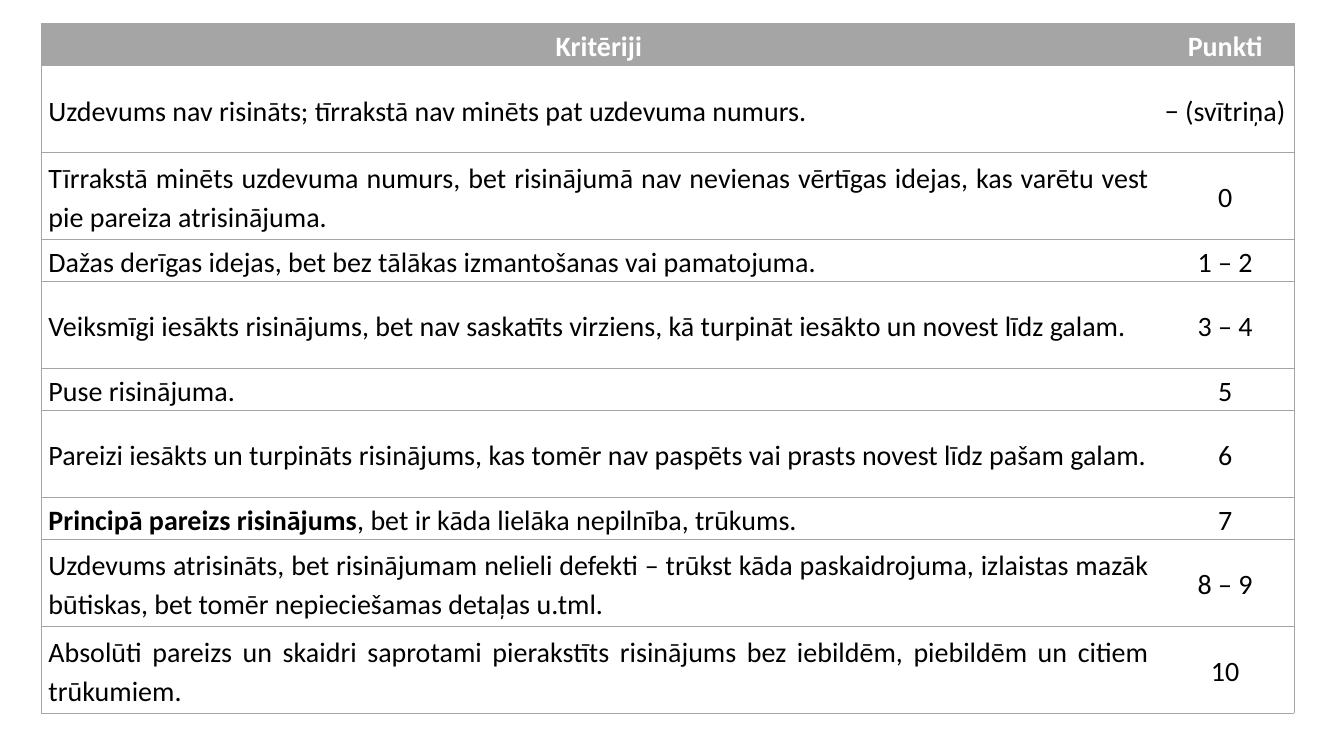
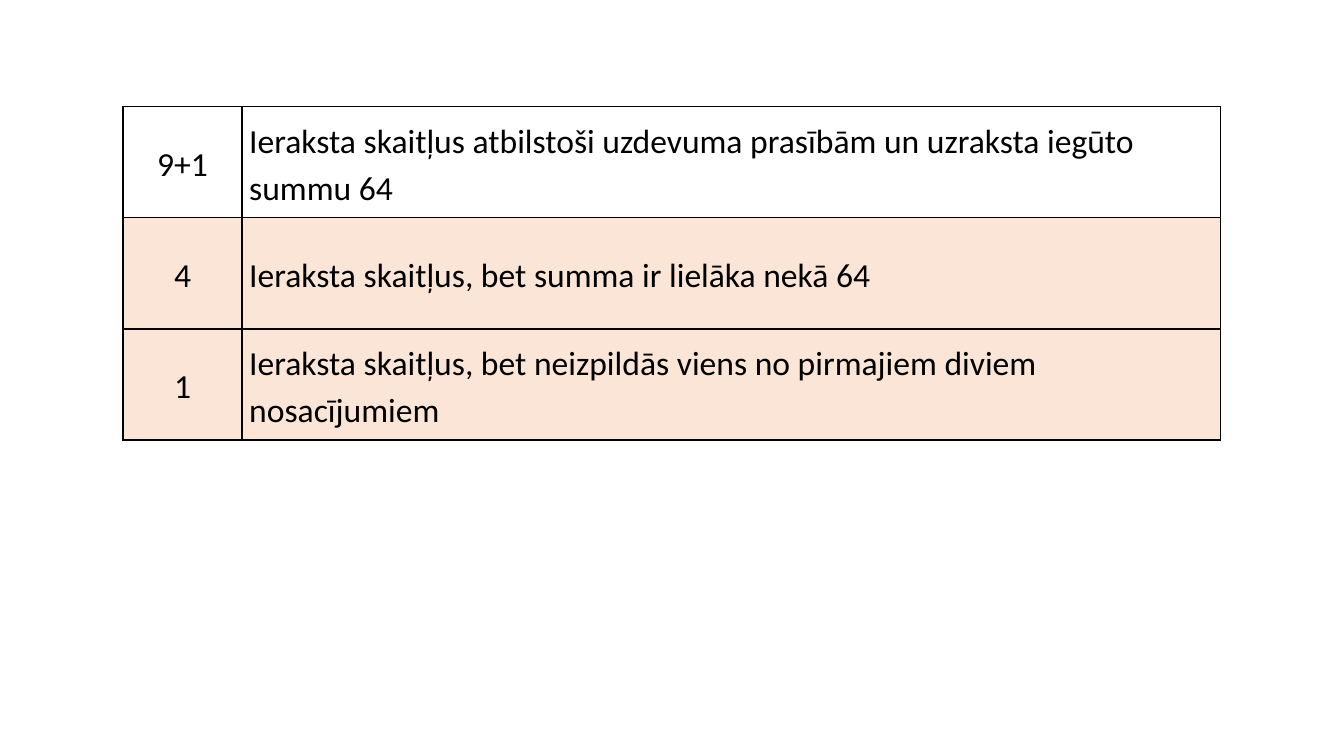
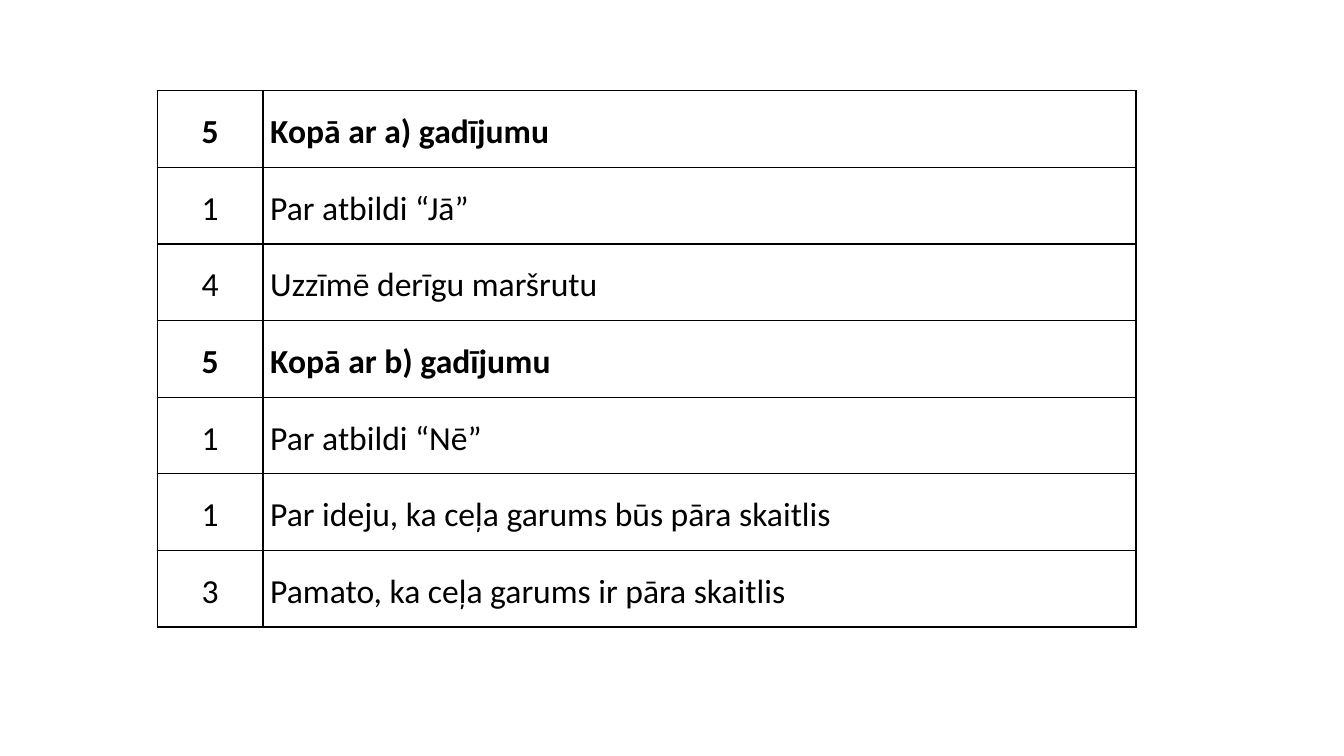
from lxml import etree
from pptx import Presentation
from pptx.dml.color import RGBColor
from pptx.enum import text
from pptx.oxml import ns
from pptx.util import Cm, Pt

BLACK = RGBColor(0x00, 0x00, 0x00)
WHITE = RGBColor(0xFF, 0xFF, 0xFF)
GRAY = RGBColor(0xA5, 0xA5, 0xA5)
PEACH = RGBColor(0xFB, 0xE5, 0xD6)

LEFT, CENTER, JUSTIFY = (text.PP_ALIGN.LEFT, text.PP_ALIGN.CENTER,
                         text.PP_ALIGN.JUSTIFY)


class Deck:
    """Holds the shared table style and the current slide."""

    FONT = "Calibri"
    CELL = {"vertical_anchor": text.MSO_ANCHOR.MIDDLE,
            "margin_left": Cm(0.18), "margin_right": Cm(0.18),
            "margin_top": 0, "margin_bottom": 0}
    PARAGRAPH = {"line_spacing": 1.15, "space_after": Pt(10)}
    FLAGS = {"first_row": False, "horz_banding": False}

    def __init__(self):
        self.prs = Presentation()
        self.prs.slide_width, self.prs.slide_height = Cm(33.87), Cm(19.05)
        self.slide = None

    def new_slide(self):
        self.slide = self.prs.slides.add_slide(self.prs.slide_layouts[6])

    @staticmethod
    def apply(target, values):
        for name, value in values.items():
            setattr(target, name, value)

    def border(self, cell, side, color, width):
        """Draw one cell edge; a color of None hides it."""
        line = etree.SubElement(cell._tc.get_or_add_tcPr(),
                                ns.qn(f"a:ln{side}"), w=str(Pt(width)))
        if color is None:
            etree.SubElement(line, ns.qn("a:noFill"))
        else:
            fill = etree.SubElement(line, ns.qn("a:solidFill"))
            etree.SubElement(fill, ns.qn("a:srgbClr"), val=str(color))

    def cell_text(self, cell, content, align, size, color, bold):
        """Set a string, or a list of (string, bold) pairs."""
        self.apply(cell, self.CELL)
        paragraph = cell.text_frame.paragraphs[0]
        self.apply(paragraph, {**self.PARAGRAPH, "alignment": align})
        runs = [(content, bold)] if isinstance(content, str) else content
        for words, run_bold in runs:
            run = paragraph.add_run()
            run.text = words
            self.apply(run.font, {"name": self.FONT, "size": Pt(size),
                                  "bold": run_bold})
            run.font.color.rgb = color

    def table(self, left, top, widths, heights, rows, aligns, size,
              line, line_width, inner_lines=True, header=None,
              bold_rows=(), fills=None):
        fills = fills or {}
        grid = self.slide.shapes.add_table(
            len(rows), len(widths), Cm(left), Cm(top),
            Cm(sum(widths)), Cm(sum(heights))).table
        self.apply(grid, self.FLAGS)
        for column, width in zip(grid.columns, widths):
            column.width = Cm(width)
        for row, height in zip(grid.rows, heights):
            row.height = Cm(height)

        last = len(widths) - 1
        for r, row in enumerate(rows):
            is_header = r == header
            for c, content in enumerate(row):
                cell = grid.cell(r, c)
                self.cell_text(cell, content,
                               CENTER if is_header else aligns[c], size,
                               WHITE if is_header else BLACK,
                               is_header or r in bold_rows)
                # Edges come before the fill in the cell properties
                shown = {"L": inner_lines or c == 0,
                         "R": inner_lines or c == last, "T": True, "B": True}
                for side, visible in shown.items():
                    self.border(cell, side, line if visible else None,
                                line_width)
                if r in fills:
                    cell.fill.solid()
                    cell.fill.fore_color.rgb = fills[r]
                else:
                    cell.fill.background()


def main():
    deck = Deck()

    # General marking criteria
    criteria = [
        ("Kritēriji", "Punkti"),
        ("Uzdevums nav risināts; tīrrakstā nav minēts pat uzdevuma numurs.",
         "− (svītriņa)"),
        ("Tīrrakstā minēts uzdevuma numurs, bet risinājumā nav nevienas "
         "vērtīgas idejas, kas varētu vest pie pareiza atrisinājuma.", "0"),
        ("Dažas derīgas idejas, bet bez tālākas izmantošanas vai "
         "pamatojuma.", "1 – 2"),
        ("Veiksmīgi iesākts risinājums, bet nav saskatīts virziens, kā "
         "turpināt iesākto un novest līdz galam.", "3 – 4"),
        ("Puse risinājuma.", "5"),
        ("Pareizi iesākts un turpināts risinājums, kas tomēr nav paspēts "
         "vai prasts novest līdz pašam galam.", "6"),
        ([("Principā pareizs risinājums", True),
          (", bet ir kāda lielāka nepilnība, trūkums.", False)], "7"),
        ("Uzdevums atrisināts, bet risinājumam nelieli defekti – trūkst "
         "kāda paskaidrojuma, izlaistas mazāk būtiskas, bet tomēr "
         "nepieciešamas detaļas u.tml.", "8 – 9"),
        ("Absolūti pareizs un skaidri saprotami pierakstīts risinājums bez "
         "iebildēm, piebildēm un citiem trūkumiem.", "10"),
    ]
    short_rows = {0, 3, 5, 7}
    heights = [1.06 if r in short_rows else 2.19 for r in range(len(criteria))]
    deck.new_slide()
    deck.table(1.04, 0.59, [28.1, 3.47], heights, criteria,
               [JUSTIFY, CENTER], 20, GRAY, 0.5, inner_lines=False,
               header=0, fills={0: GRAY})

    # Points for the number-filling task
    points_style = {"aligns": [CENTER, LEFT], "size": 24,
                    "line": BLACK, "line_width": 1}
    sum_points = [
        ("9+1", "Ieraksta skaitļus atbilstoši uzdevuma prasībām un uzraksta "
                "iegūto summu 64"),
        ("4", "Ieraksta skaitļus, bet summa ir lielāka nekā 64"),
        ("1", "Ieraksta skaitļus, bet neizpildās viens no pirmajiem diviem "
              "nosacījumiem"),
    ]
    deck.new_slide()
    deck.table(3.1, 2.69, [3, 24.66], [2.8] * len(sum_points), sum_points,
               fills={1: PEACH, 2: PEACH}, **points_style)

    # Points for the route task
    route_points = [
        ("5", "Kopā ar a) gadījumu"),
        ("1", "Par atbildi “Jā”"),
        ("4", "Uzzīmē derīgu maršrutu"),
        ("5", "Kopā ar b) gadījumu"),
        ("1", "Par atbildi “Nē”"),
        ("1", "Par ideju, ka ceļa garums būs pāra skaitlis"),
        ("3", "Pamato, ka ceļa garums ir pāra skaitlis"),
    ]
    deck.new_slide()
    deck.table(3.96, 2.29, [2.67, 22], [1.93] * len(route_points),
               route_points, bold_rows={0, 3}, **points_style)

    deck.prs.save("out.pptx")


if __name__ == "__main__":
    main()
